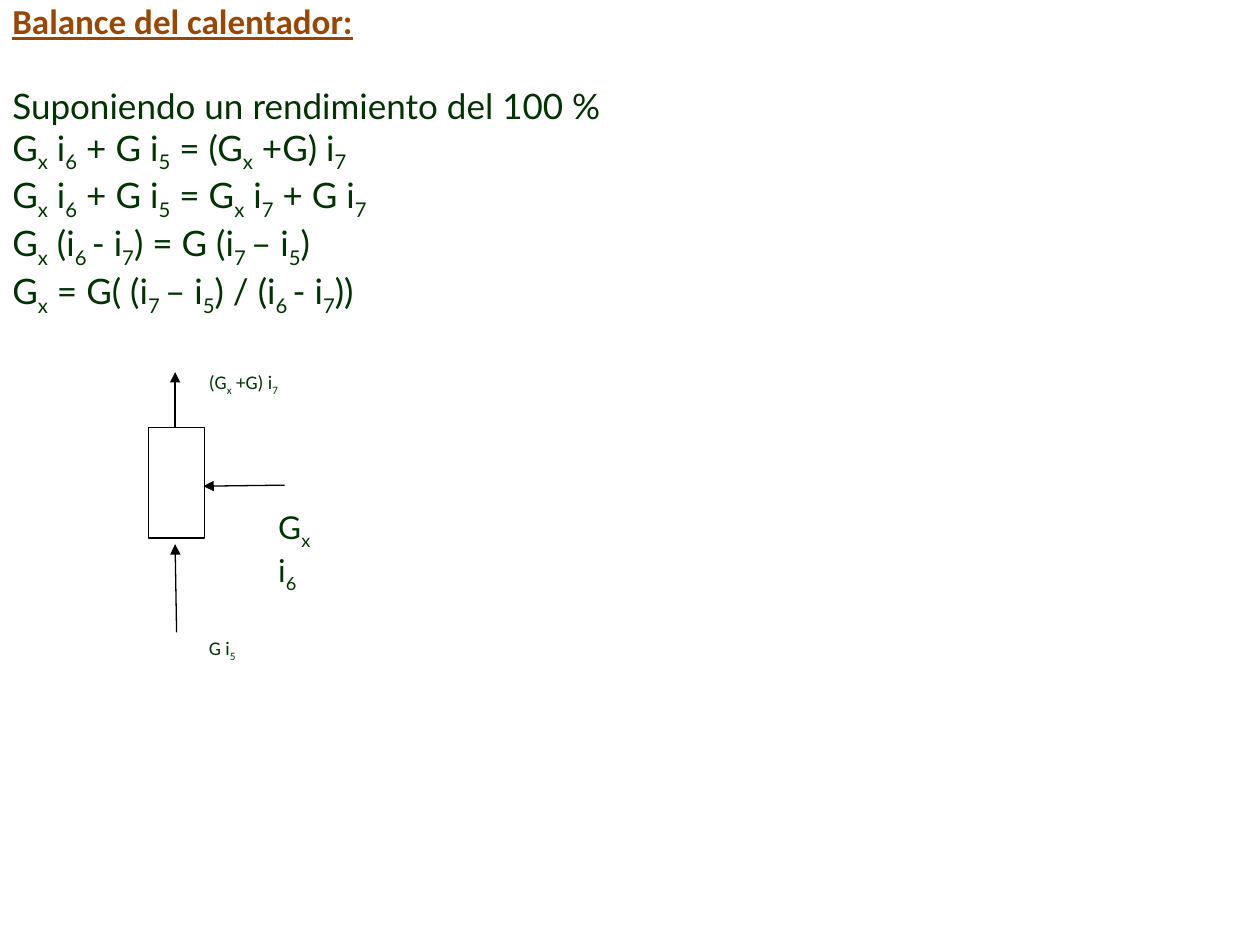
import pptx
import pptx.util
import pptx.dml.color
import pptx.enum.shapes
import pptx.enum.text
import pptx.oxml.ns
from lxml import etree

Cm = pptx.util.Cm
Pt = pptx.util.Pt
RGBColor = pptx.dml.color.RGBColor

BLACK = RGBColor(0x00, 0x00, 0x00)
WHITE = RGBColor(0xFF, 0xFF, 0xFF)
GREEN = RGBColor(0x00, 0x33, 0x00)
BROWN = RGBColor(0x98, 0x48, 0x06)


class Deck:
    """Holds the style and the current slide."""
    head_font = "Calibri"
    body_font = "Lato"
    line_width = Pt(0.75)

    def __init__(self, width, height):
        self.prs = pptx.Presentation()
        self.prs.slide_width, self.prs.slide_height = Cm(width), Cm(height)
        self.s = self.prs.slides.add_slide(self.prs.slide_layouts[6])

    def fill_paragraph(self, p, text, size, font, color=GREEN):
        """Fill a paragraph; parts between underscores are subscripts."""
        for i, part in enumerate(text.split("_")):
            if part:
                r = p.add_run()
                r.text = part
                if i % 2:
                    r._r.get_or_add_rPr().set("baseline", "-25000")
        p.alignment = pptx.enum.text.PP_ALIGN.LEFT
        p.font.size, p.font.name = Pt(size), font
        p.font.color.rgb = color

    def text(self, x, y, w, h):
        tf = self.s.shapes.add_textbox(Cm(x), Cm(y), Cm(w), Cm(h)).text_frame
        tf.word_wrap = True
        return tf

    def box(self, x, y, w, h, line):
        sp = self.s.shapes.add_shape(pptx.enum.shapes.MSO_SHAPE.RECTANGLE,
                                     Cm(x), Cm(y), Cm(w), Cm(h))
        sp.shadow.inherit = False
        sp.fill.solid()
        sp.fill.fore_color.rgb = WHITE
        sp.line.color.rgb = line
        sp.line.width = self.line_width
        return sp

    def label(self, x, y, w, h, text):
        tf = self.box(x, y, w, h, WHITE).text_frame
        tf.vertical_anchor = pptx.enum.text.MSO_ANCHOR.TOP
        tf.word_wrap = True
        p = tf.paragraphs[0]
        p.space_after = Pt(10)
        self.fill_paragraph(p, text, 11, self.head_font)

    def arrow(self, x1, y1, x2, y2):
        c = self.s.shapes.add_connector(pptx.enum.shapes.MSO_CONNECTOR.STRAIGHT,
                                        Cm(x1), Cm(y1), Cm(x2), Cm(y2))
        c.line.color.rgb = BLACK
        c.line.width = self.line_width
        qn = pptx.oxml.ns.qn
        etree.SubElement(c.line._get_or_add_ln(), qn("a:tailEnd"), type="triangle")
        etree.SubElement(c._element.spPr, qn("a:effectLst"))


d = Deck(25.4, 19.05)

# Heading and equations
EQUATIONS = [
    "Suponiendo un rendimiento del 100 %",
    "G_x_ i_6_ + G i_5_ = (G_x_ +G) i_7_",
    "G_x_ i_6_ + G i_5_ = G_x_ i_7_ + G i_7_",
    "G_x_ (i_6 _- i_7_) = G (i_7 _– i_5_)",
    "G_x_ = G( (i_7 _– i_5_) / (i_6 _- i_7_))",
]
tf = d.text(0, 0, 25.4, 19.05)
tf.margin_top = 0
p = tf.paragraphs[0]
d.fill_paragraph(p, "Balance del calentador:", 20, d.head_font, BROWN)
p.font.bold = p.font.underline = True
for i, equation in enumerate(EQUATIONS):
    p = tf.add_paragraph()
    if i == 0:
        p.space_before = Pt(24)
    d.fill_paragraph(p, equation, 20, d.body_font)

# Heater with its flows
d.box(3, 8.62, 1.12, 2.23, BLACK)
d.arrow(3.56, 12.75, 3.53, 10.97)
d.arrow(5.74, 9.78, 4.1, 9.8)
d.arrow(3.53, 8.62, 3.53, 7.5)

# Flow labels
d.label(3.96, 7.34, 2.26, 0.71, "(G_x_ +G) i_7_")
tf = d.text(5.36, 10.11, 1.6, 1.02)
d.fill_paragraph(tf.paragraphs[0], "G_x_ i_6_", 18, d.body_font)
d.label(3.96, 12.7, 1.96, 0.81, "G i_5_")

d.prs.save("out.pptx")
